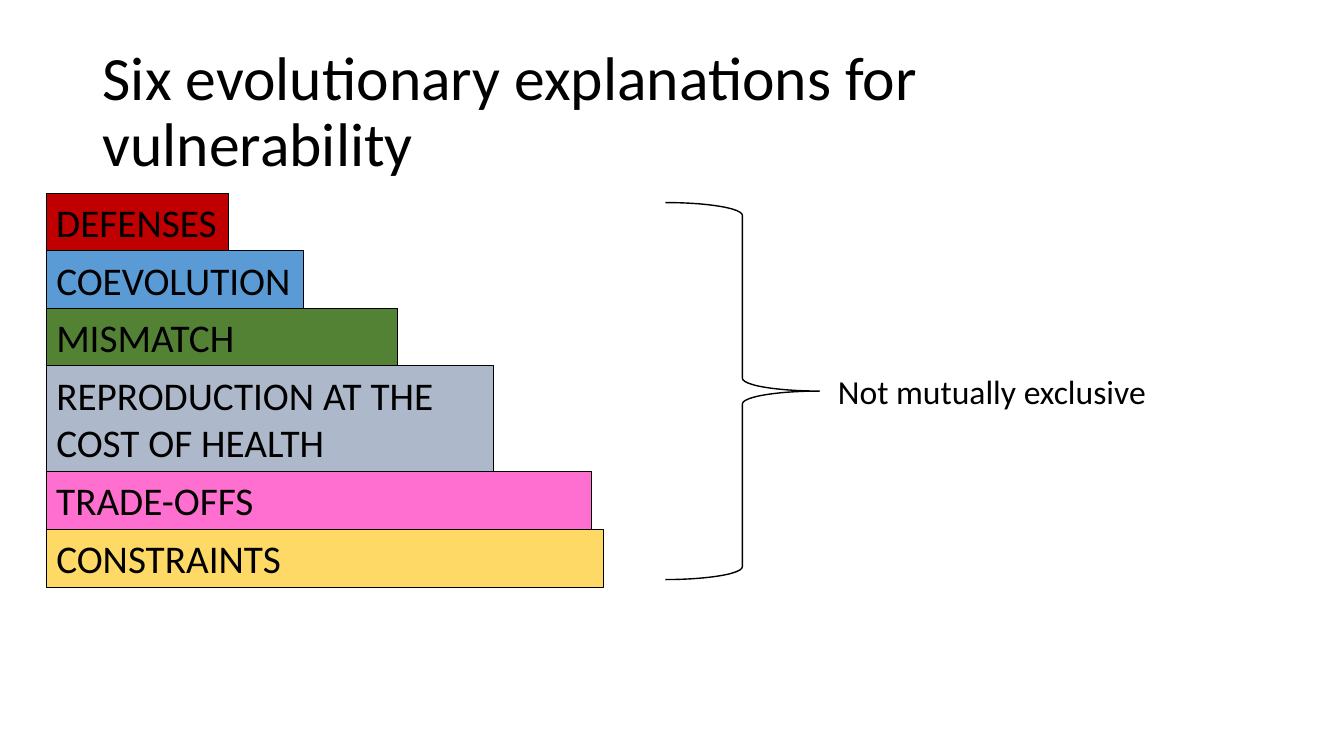
import pptx
import pptx.dml.color
import pptx.enum.shapes
import pptx.enum.text
import pptx.util

SHAPE = pptx.enum.shapes.MSO_SHAPE
ANCHOR = pptx.enum.text.MSO_ANCHOR
ALIGN = pptx.enum.text.PP_ALIGN

COLUMNS, ROWS = 40, 30


def rgb(hex_colour):
    return pptx.dml.color.RGBColor.from_string(hex_colour)


def apply(target, values):
    for name, value in values.items():
        setattr(target, name, value)


class SlideBuilder:
    """Holds the style and the current slide; lengths are grid columns and rows."""

    font = "Calibri"
    ink = "000000"

    def __init__(self, deck):
        self.column = deck.slide_width / COLUMNS
        self.row = deck.slide_height / ROWS
        self.slide = deck.slides.add_slide(deck.slide_layouts[6])

    def place(self, left, top, width, height):
        return (round(left * self.column), round(top * self.row),
                round(width * self.column), round(height * self.row))

    def set_words(self, holder, wording, size, frame=None, paragraph=None):
        text_frame = holder.text_frame
        apply(text_frame, {"word_wrap": True, "vertical_anchor": ANCHOR.TOP,
                           **(frame or {})})
        line = text_frame.paragraphs[0]
        apply(line, {"alignment": ALIGN.LEFT, **(paragraph or {})})
        run = line.add_run()
        run.text = wording
        apply(run.font, {"name": self.font, "size": pptx.util.Pt(size)})
        run.font.color.rgb = rgb(self.ink)

    def text(self, area, wording, size, frame=None, paragraph=None):
        box = self.slide.shapes.add_textbox(*self.place(*area))
        self.set_words(box, wording, size, frame, paragraph)

    def outlined(self, kind, area, line_width):
        shape = self.slide.shapes.add_shape(kind, *self.place(*area))
        shape.shadow.inherit = False
        shape.line.color.rgb = rgb(self.ink)
        shape.line.width = pptx.util.Pt(line_width)
        return shape

    def bar(self, area, wording, fill, wraps):
        shape = self.outlined(SHAPE.RECTANGLE, area, 0.75)
        shape.fill.solid()
        shape.fill.fore_color.rgb = rgb(fill)
        self.set_words(shape, wording, 28, {"word_wrap": wraps})

    def brace(self, area):
        self.outlined(SHAPE.RIGHT_BRACE, area, 1).fill.background()


# Wording, colour, width in columns, height in rows, wrapping
EXPLANATIONS = [
    ("DEFENSES", "C00000", 5.43, 2.28, False),
    ("COEVOLUTION", "5B9BD5", 7.65, 2.28, False),
    ("MISMATCH", "548235", 10.44, 2.28, True),
    ("REPRODUCTION AT THE COST OF HEALTH", "ADB9CA", 13.32, 4.2, True),
    ("TRADE-OFFS", "FF6FCF", 16.23, 2.3, True),
    ("CONSTRAINTS", "FFD966", 16.59, 2.28, True),
]


def main():
    deck = pptx.Presentation()
    apply(deck, {"slide_width": pptx.util.Inches(13.33),
                 "slide_height": pptx.util.Inches(7.5)})
    builder = SlideBuilder(deck)

    # Title
    builder.text((2.76, 1.6, 34.5, 5.8),
                 "Six evolutionary explanations for vulnerability", 44,
                 {"vertical_anchor": ANCHOR.MIDDLE}, {"line_spacing": 0.9})

    # Stack of explanations, each bar starting where the last one ends
    bar_top = 7.68
    for wording, fill, width, height, wraps in EXPLANATIONS:
        builder.bar((1.38, bar_top, width, height), wording, fill, wraps)
        bar_top += height

    # Brace and its remark
    builder.brace((19.8, 8.04, 4.59, 14.96))
    builder.text((21.93, 14.52, 15.18, 2), "Not mutually exclusive", 24,
                 paragraph={"alignment": ALIGN.CENTER})

    deck.save("out.pptx")


if __name__ == "__main__":
    main()
